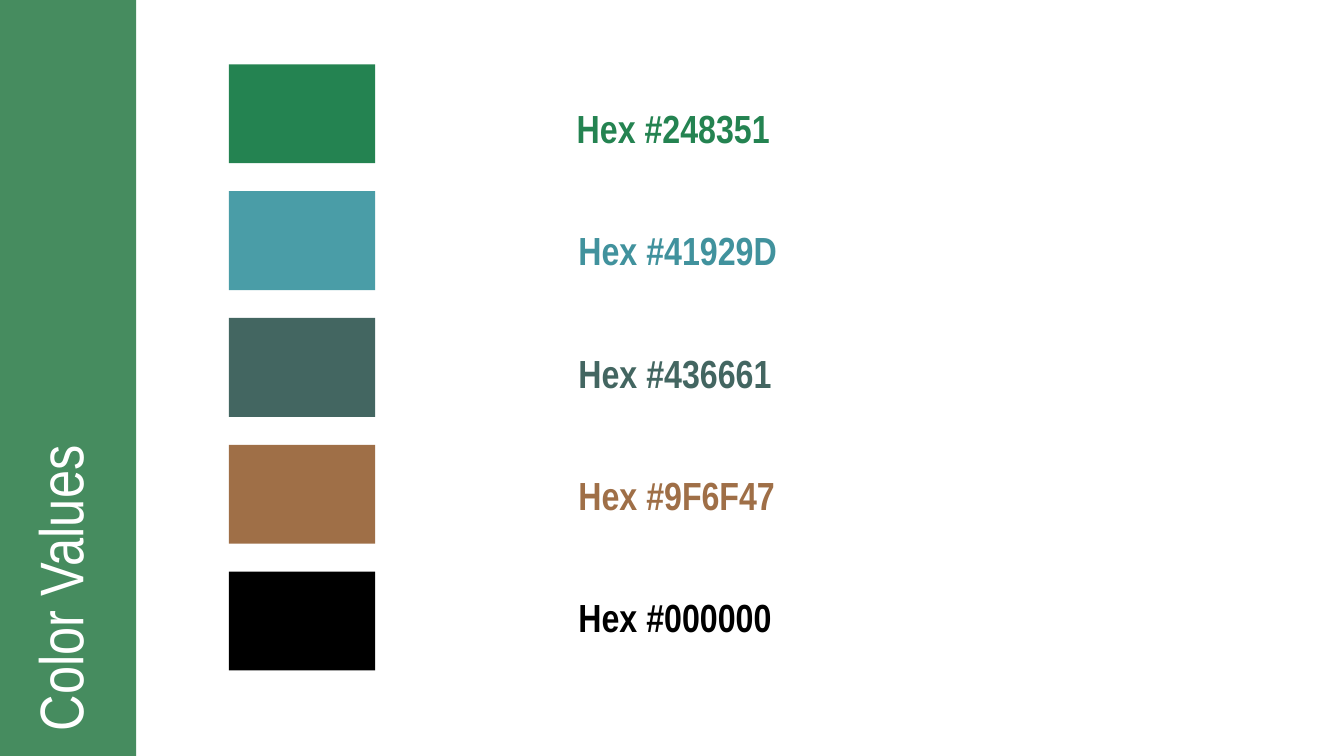
from dataclasses import dataclass

from lxml import etree
from pptx import Presentation
from pptx import util as u
from pptx.dml import color
from pptx.enum import shapes, text
from pptx.oxml import ns


@dataclass(frozen=True)
class Theme:
    font: str = "Arial Narrow"
    title_size: int = 44
    label_size: int = 28
    bar: str = "468C5F"
    title: str = "FFFFFF"
    swatches: tuple = ("248351", "4A9DA7", "436661", "9F6F47", "000000")
    labels: tuple = ("248351", "41929D", "436661", "9F6F47", "000000")


theme = Theme()
presentation = Presentation()
presentation.slide_width = u.Inches(13.33)
presentation.slide_height = u.Inches(7.5)
slide = presentation.slides.add_slide(presentation.slide_layouts[1])


def percent(left, top, width, height):
    across = presentation.slide_width / 100
    down = presentation.slide_height / 100
    return [round(share) for share in (left * across, top * down, width * across, height * down)]


def write(shape, box, words, size, rgb, bold):
    shape.left, shape.top, shape.width, shape.height = percent(*box)
    frame = shape.text_frame
    frame.text = words
    frame.word_wrap = True
    frame.auto_size = text.MSO_AUTO_SIZE.NONE
    paragraph = frame.paragraphs[0]
    paragraph.alignment = text.PP_ALIGN.LEFT
    paragraph.line_spacing = 0.9
    font = paragraph.runs[0].font
    font.name = theme.font
    font.size = u.Pt(size)
    font.bold = bold
    font.color.rgb = color.RGBColor.from_string(rgb)
    return paragraph


bar = slide.shapes.add_shape(shapes.MSO_SHAPE.RECTANGLE, *percent(-23.06, 41, 56.26, 18))
bar.rotation = 270
slide.shapes._spTree.insert(2, bar._element)

swatch_top, swatch_pitch = 8.53, 16.77
swatches = [
    slide.shapes.add_shape(
        shapes.MSO_SHAPE.RECTANGLE,
        *percent(17.03, swatch_top + row * swatch_pitch, 10.88, 13.07),
    )
    for row in range(len(theme.swatches))
]
for block, rgb in zip([bar, *swatches], [theme.bar, *theme.swatches]):
    block.shadow.inherit = False
    block.fill.solid()
    block.fill.fore_color.rgb = color.RGBColor.from_string(rgb)
    block.line.fill.background()

title = slide.shapes.title
write(title, (-22.28, 40.4, 54, 19.33), "Color Values", theme.title_size, theme.title, False)
title.rotation = 270
title.text_frame.vertical_anchor = text.MSO_ANCHOR.MIDDLE

label_top, label_pitch = 13.87, 16.17
for row, rgb in enumerate(theme.labels):
    label = slide.shapes.add_textbox(0, 0, 0, 0) if row else slide.placeholders[1]
    left = 42.3 if row else 42.16
    box = (left, label_top + row * label_pitch, 50.94, 7.73)
    paragraph = write(label, box, f"Hex #{rgb}", theme.label_size, rgb, True)
    paragraph.space_before = u.Pt(10)
    properties = paragraph._p.get_or_add_pPr()
    properties.set("marL", "0")
    properties.set("indent", "0")
    etree.SubElement(properties, ns.qn("a:buNone"))

presentation.save("out.pptx")
